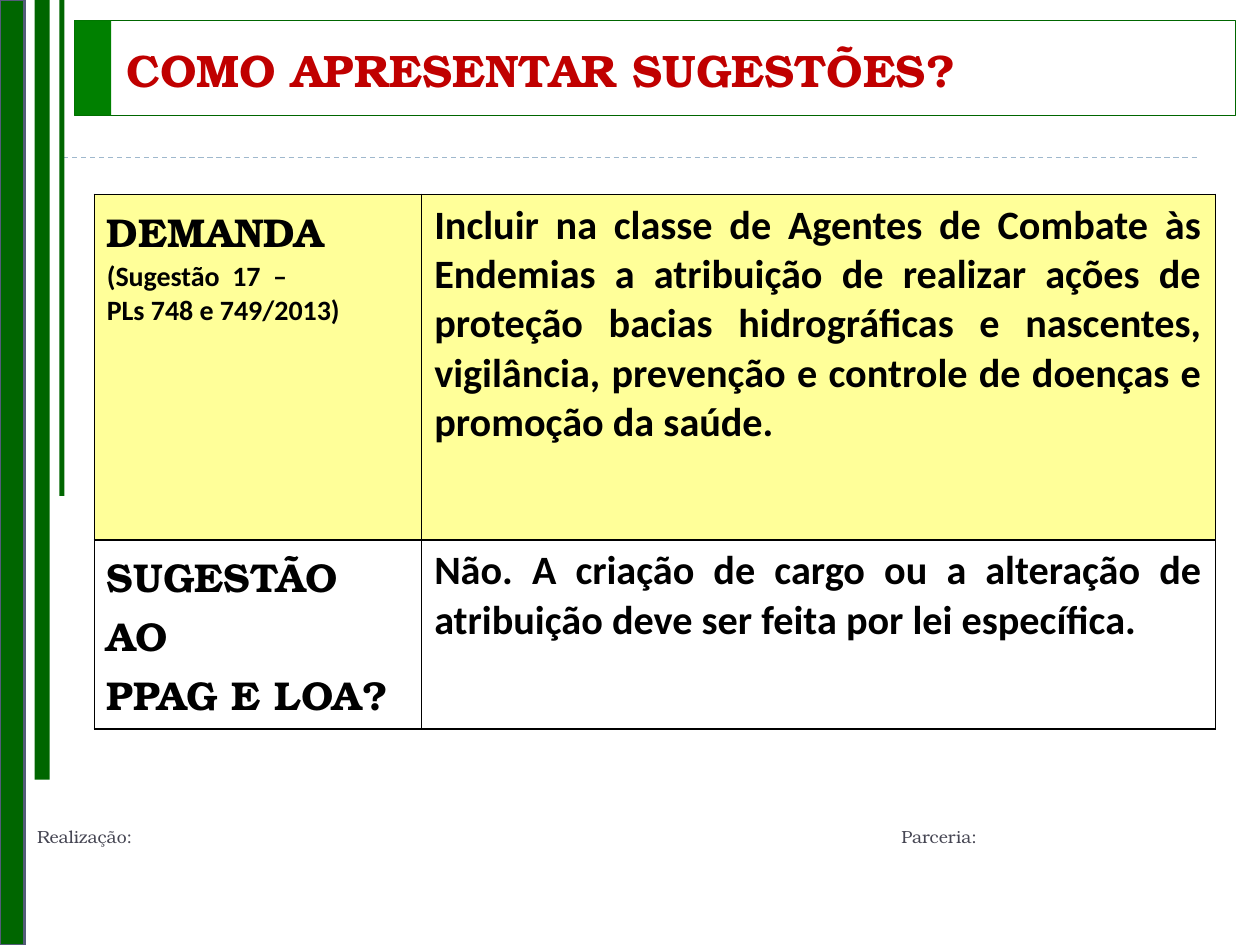
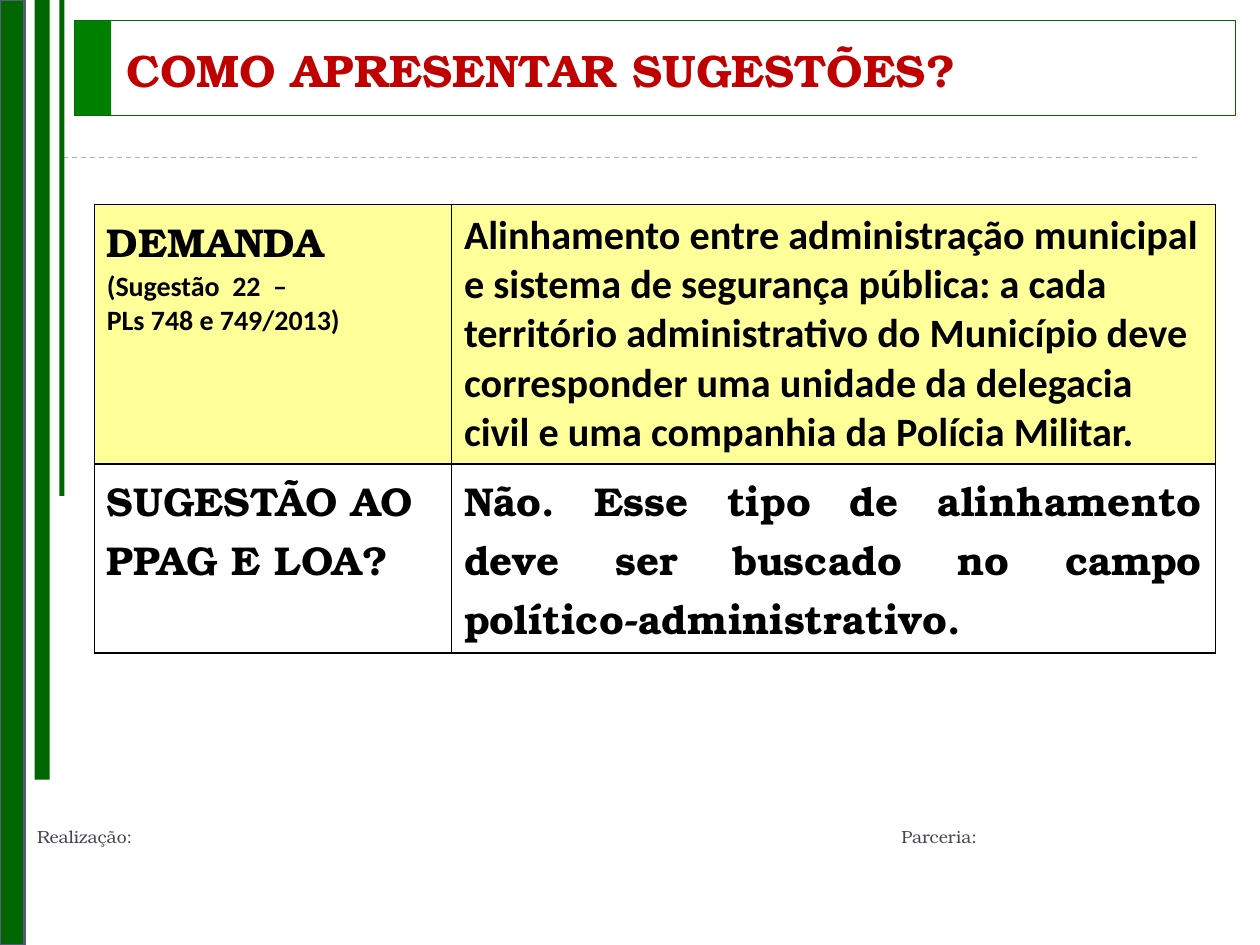
from dataclasses import dataclass
from typing import NamedTuple, Optional

from lxml import etree
from pptx import Presentation
from pptx import util as u
from pptx.dml.color import RGBColor
from pptx.enum import dml, shapes, text
from pptx.oxml import ns


@dataclass(frozen=True)
class Theme:
    dark: str = "006600"
    green: str = "008000"
    edge: str = "545C79"
    dash: str = "9FB8CD"
    red: str = "C00000"
    grey: str = "464653"
    black: str = "000000"
    white: str = "FFFFFF"
    yellow: str = "FFFF99"
    serif: str = "TeX Gyre Bonum"
    sans: str = "Calibri"
    head: float = 26
    body: float = 23
    note: float = 16
    foot: float = 10


T = Theme()


class Bar(NamedTuple):
    x: float
    y: float
    w: float
    h: float
    fill: Optional[str] = None
    line: Optional[str] = None
    width: float = 0


class Para(NamedTuple):
    words: str
    font: str = T.sans
    size: float = T.body
    just: bool = False


class Grid(NamedTuple):
    top: float
    cols: tuple[float, float]
    rows: tuple[float, float]
    number: int
    demand: Para
    answer: Para


# Side bands, title frame and its green block
BARS = [
    Bar(0.7, 0, 0.3, 15.72, T.dark),
    Bar(1.5, 0.41, 23.4, 1.92, None, T.dark, 0.5),
    Bar(1.5, 0.41, 0.74, 1.92, T.green),
    Bar(0, 0, 0.5, 19.05, T.dark, T.edge, 1.5),
    Bar(1.2, 0, 0.1, 10, T.dark),
]

TITLE = "COMO APRESENTAR SUGESTÕES?"

GRIDS = [
    Grid(3.92, (6.6, 16), (6.97, 3.81), 17,
         Para("Incluir na classe de Agentes de Combate às Endemias a "
              "atribuição de realizar ações de proteção bacias "
              "hidrográficas e nascentes, vigilância, prevenção e controle "
              "de doenças e promoção da saúde.", just=True),
         Para("Não. A criação de cargo ou a alteração de atribuição deve "
              "ser feita por lei específica.", just=True)),
    Grid(4.12, (7.2, 15.4), (5.23, 3.81), 22,
         Para("Alinhamento entre administração municipal e sistema de "
              "segurança pública: a cada território administrativo do "
              "Município deve corresponder uma unidade da delegacia civil "
              "e uma companhia da Polícia Militar."),
         Para("Não. Esse tipo de alinhamento deve ser buscado no campo "
              "político-administrativo.", T.serif, just=True)),
]


def apply(item, form: dict) -> None:
    for name, value in form.items():
        setattr(item, name, value)


def place(item, x: float, y: float, w: float, h: float) -> None:
    apply(item, dict(left=u.Cm(x), top=u.Cm(y),
                     width=u.Cm(w), height=u.Cm(h)))


def style(font, face: str, size: float, tint: str, bold: bool) -> None:
    apply(font, dict(name=face, size=u.Pt(size), bold=bold))
    font.color.rgb = RGBColor.from_string(tint)


def draw_bar(slide, bar: Bar) -> None:
    box = slide.shapes.add_shape(
        shapes.MSO_SHAPE.RECTANGLE, *map(u.Cm, bar[:4]))
    box.shadow.inherit = False
    for fill, tint in ((box.fill, bar.fill), (box.line.fill, bar.line)):
        if tint:
            fill.solid()
            fill.fore_color.rgb = RGBColor.from_string(tint)
        else:
            fill.background()
    if bar.line:
        box.line.width = u.Pt(bar.width)


def draw_rule(slide) -> None:
    rule = slide.shapes.add_connector(
        shapes.MSO_CONNECTOR.STRAIGHT, *map(u.Cm, (1.27, 3.18, 24.13, 3.18)))
    rule.line.color.rgb = RGBColor.from_string(T.dash)
    apply(rule.line, dict(width=u.Pt(0.75), dash_style=dml.MSO_LINE.DASH))
    etree.SubElement(rule._element.spPr, ns.qn("a:effectLst"))


def draw_title(slide) -> None:
    title = slide.shapes.title
    place(title, 2.3, 0.7, 21.64, 1.4)
    frame = title.text_frame
    frame.text = TITLE
    apply(frame, dict(word_wrap=True, auto_size=text.MSO_AUTO_SIZE.NONE,
                      vertical_anchor=text.MSO_ANCHOR.MIDDLE))
    para = frame.paragraphs[0]
    para.alignment = text.PP_ALIGN.LEFT
    style(para.runs[0].font, T.serif, T.head, T.red, True)


def draw_foot(slide) -> None:
    box = slide.shapes.add_textbox(*map(u.Cm, (0.5, 16.52, 24.26, 0.79)))
    box.text_frame.word_wrap = True
    para = box.text_frame.paragraphs[0]
    para.space_before = u.Pt(6)
    run = para.add_run()
    run.text = "Realização:\tParceria:"
    style(run.font, T.serif, T.foot, T.grey, False)
    # Tab stop for the second label
    tabs = etree.SubElement(para._p.get_or_add_pPr(), ns.qn("a:tabLst"))
    etree.SubElement(tabs, ns.qn("a:tab"), pos=str(u.Cm(17.42)), algn="l")


def add_edges(cell) -> None:
    props = cell._tc.get_or_add_tcPr()
    for side in ("lnL", "lnR", "lnT", "lnB"):
        line = etree.SubElement(props, ns.qn(f"a:{side}"), w=str(u.Pt(1)))
        fill = etree.SubElement(line, ns.qn("a:solidFill"))
        etree.SubElement(fill, ns.qn("a:srgbClr"), val=T.black)


def fill_cell(cell, paras: list[Para], tint: str) -> None:
    add_edges(cell)
    cell.fill.solid()
    cell.fill.fore_color.rgb = RGBColor.from_string(tint)
    frame = cell.text_frame
    for i, item in enumerate(paras):
        para = frame.add_paragraph() if i else frame.paragraphs[0]
        para.alignment = (text.PP_ALIGN.JUSTIFY if item.just
                          else text.PP_ALIGN.LEFT)
        run = para.add_run()
        run.text = item.words
        style(run.font, item.font, item.size, T.black, True)


def draw_grid(slide, grid: Grid) -> None:
    table = slide.shapes.add_table(
        2, 2, u.Cm(1.9), u.Cm(grid.top),
        u.Cm(sum(grid.cols)), u.Cm(sum(grid.rows))).table
    apply(table, dict(first_row=False, horz_banding=False))
    for col, width in zip(table.columns, grid.cols):
        col.width = u.Cm(width)
    for row, height in zip(table.rows, grid.rows):
        row.height = u.Cm(height)
    cells = [
        [[Para("DEMANDA", T.serif),
          Para(f"(Sugestão  {grid.number}  –", size=T.note),
          Para("PLs 748 e 749/2013)", size=T.note)], [grid.demand]],
        [[Para("SUGESTÃO AO", T.serif),
          Para("PPAG E LOA?", T.serif)], [grid.answer]],
    ]
    for r, (row, tint) in enumerate(zip(cells, (T.yellow, T.white))):
        for c, paras in enumerate(row):
            fill_cell(table.cell(r, c), paras, tint)


def main() -> None:
    deck = Presentation()
    apply(deck, dict(slide_width=u.Cm(25.4), slide_height=u.Cm(19.05)))
    plain = deck.slide_layouts.get_by_name("Title Only")
    for grid in GRIDS:
        slide = deck.slides.add_slide(plain)
        # Shared frame
        draw_bar(slide, BARS[0])
        draw_rule(slide)
        for bar in BARS[1:]:
            draw_bar(slide, bar)
        draw_foot(slide)
        draw_title(slide)
        # Question and answer
        draw_grid(slide, grid)
    deck.save("out.pptx")


if __name__ == "__main__":
    main()
